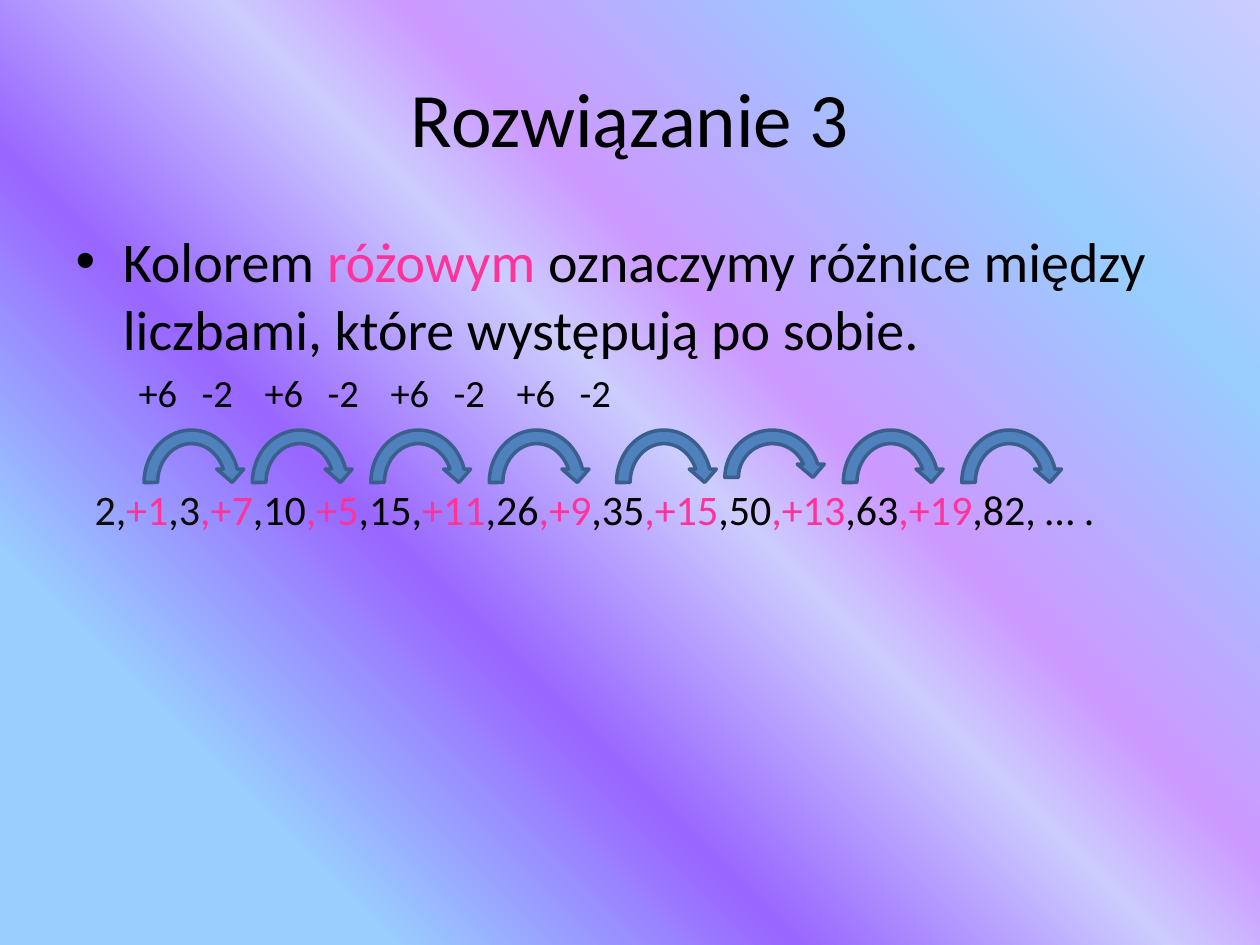
import pptx
import pptx.dml.color
import pptx.enum.shapes
import pptx.enum.text
import pptx.oxml
import pptx.oxml.ns
import pptx.util
from lxml import etree

IN = pptx.util.Inches
PT = pptx.util.Pt
QN = pptx.oxml.ns.qn
BLACK, INK, PINK = "000000", "0D0D0D", "FF3399"
STOPS = [(18, "99CCFF"), (36, "9966FF"), (53, "CCCCFF"),
         (61, "CC99FF"), (82, "99CCFF"), (100, "CCCCFF")]
ARROW_LEFTS = [1.09, 1.95, 2.89, 3.83, 4.84, 5.7, 6.64, 7.58]
LABEL_CENTERS = [1.51, 2.4, 3.29, 4.26, 5.16, 5.98, 6.95, 7.85]
BODY_LEFT, INSET = 0.5, 0.1
SHORT_ARROW = 5


def rgb(value):
    return pptx.dml.color.RGBColor.from_string(value)


def paint_background(s):
    fill = s.background.fill
    fill.gradient()
    fill.gradient_angle = 45
    stops = next(s.background._element.iter(QN("a:gsLst")))
    for old in list(stops):
        stops.remove(old)
    for position, color in STOPS:
        gs = etree.SubElement(stops, QN("a:gs"), pos=str(position * 1000))
        etree.SubElement(gs, QN("a:srgbClr"), val=color)


def place(sp, left, top, width, height):
    sp.left, sp.top, sp.width, sp.height = map(IN, (left, top, width, height))


def style(r, size, color):
    r.font.name = "Calibri"
    r.font.size = PT(size)
    r.font.color.rgb = rgb(color)


def add_runs(p, parts, size):
    for text, color in parts:
        r = p.add_run()
        r.text = text
        style(r, size, color)


def plain_indent(p, left=0):
    pPr = p._p.get_or_add_pPr()
    pPr.set("marL", str(IN(left)))
    pPr.set("indent", "0")
    etree.SubElement(pPr, QN("a:buNone"))
    return pPr


def add_title(s):
    sp = s.shapes.title
    place(sp, BODY_LEFT, 0.3, 9, 1.25)
    sp.text_frame.text = "Rozwiązanie 3"
    style(sp.text_frame.paragraphs[0].runs[0], 44, BLACK)


def add_labels(p):
    p.text = "".join("\t" + ("+6", "-2")[i % 2] for i in range(len(LABEL_CENTERS)))
    for r in p.runs:
        style(r, 22, BLACK)
    tabs = etree.SubElement(plain_indent(p), QN("a:tabLst"))
    for center in LABEL_CENTERS:
        position = IN(center - BODY_LEFT - INSET)
        etree.SubElement(tabs, QN("a:tab"), pos=str(position), algn="ctr")


def add_sequence(p):
    p.space_before = PT(39)
    plain_indent(p, 0.15)
    numbers = ["2,", ",3", ",10", ",15,", ",26", ",35", ",50", ",63", ",82, … ."]
    steps = ["+1", ",+7", ",+5", "+11", ",+9", ",+15", ",+13", ",+19"]
    for i, number in enumerate(numbers):
        add_runs(p, [(number, INK if i < 2 else BLACK)], 24)
        add_runs(p, [(step, PINK) for step in steps[i:i + 1]], 24)


def add_body(s):
    sp = s.placeholders[1]
    place(sp, BODY_LEFT, 1.75, 9, 4.95)
    tf = sp.text_frame
    add_runs(tf.paragraphs[0], [
        ("Kolorem ", BLACK), ("różowym", PINK),
        (" oznaczymy różnice między liczbami, które występują po sobie.", BLACK)], 32)
    add_labels(tf.add_paragraph())
    add_sequence(tf.add_paragraph())


def add_arrow(s, left, height):
    sp = s.shapes.add_shape(pptx.enum.shapes.MSO_SHAPE.CIRCULAR_ARROW,
                            IN(left), IN(3.36), IN(0.86), IN(height))
    sp.shadow.inherit = False
    sp.fill.solid()
    sp.fill.fore_color.rgb = rgb("4F81BD")
    sp.line.color.rgb = rgb("3A5F8C")
    sp.line.width = PT(2)


def main():
    prs = pptx.Presentation()
    prs.slide_width, prs.slide_height = IN(10), IN(7.5)
    s = prs.slides.add_slide(prs.slide_layouts[1])
    paint_background(s)
    add_title(s)
    add_body(s)
    for i, left in enumerate(ARROW_LEFTS):
        add_arrow(s, left, 0.86 if i == SHORT_ARROW else 0.94)
    prs.save("out.pptx")


if __name__ == "__main__":
    main()
